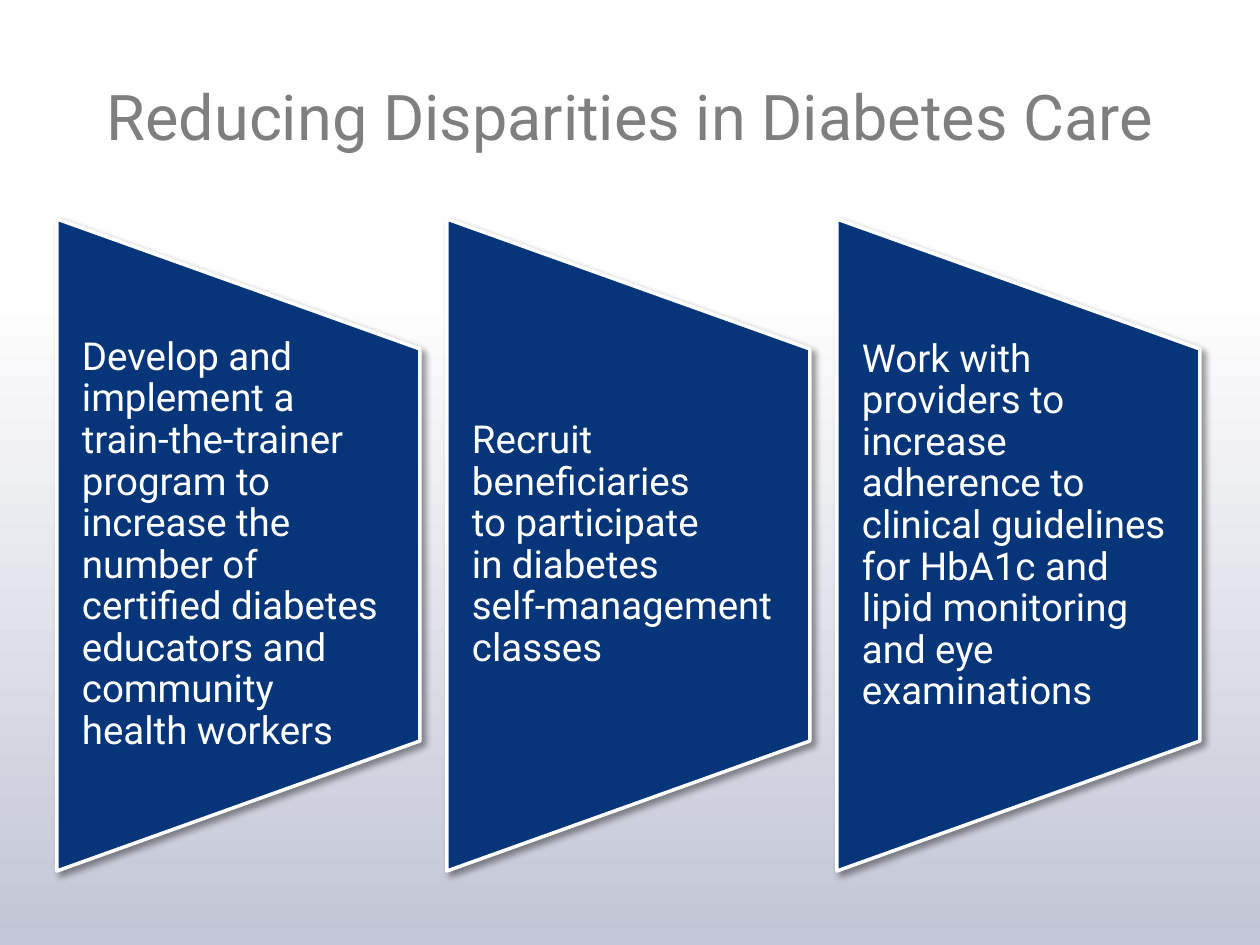
import pptx
import pptx.dml.color
import pptx.enum.text
import pptx.oxml
import pptx.oxml.ns
import pptx.util

PX = pptx.util.Inches(1) / 126
FONT = "Roboto"
TITLE = "Reducing Disparities in Diabetes Care"
BACKGROUND = [(0.31, "FFFFFF"), (1, "C2C5D5")]
PANELS = [
    {"top_inset": 126, "paras": [
        ["Develop and implement a"],
        ["train-the-trainer program to increase the number of"],
        ["certified diabetes educators and community"],
        ["health workers"],
    ]},
    {"top_inset": 126, "paras": [
        ["Recruit beneficiaries", "to participate", "in diabetes", "self-management classes"],
    ]},
    {"top_inset": 88, "paras": [
        ["Work with providers to increase adherence to clinical guidelines for HbA1c and"],
        ["lipid monitoring and eye examinations"],
    ]},
]
LEFT, TOP, WIDTH, HEIGHT = 57, 219, 363, 652
PITCH, SLOPE = 390, 130
SHADOW = (
    f'<a:effectLst {pptx.oxml.ns.nsdecls("a")}>'
    '<a:outerShdw blurRad="50800" dist="38100" dir="2700000" algn="tl" rotWithShape="0">'
    '<a:srgbClr val="000000"><a:alpha val="40000"/></a:srgbClr>'
    '</a:outerShdw></a:effectLst>'
)


def px(length):
    return pptx.util.Emu(round(length * PX))


def color(value):
    return pptx.dml.color.RGBColor.from_string(value)


def set_insets(frame, left, top, right, bottom):
    frame.word_wrap = True
    frame.margin_left, frame.margin_top = px(left), px(top)
    frame.margin_right, frame.margin_bottom = px(right), px(bottom)


def add_span(para, text, size, fill):
    span = para.add_run()
    span.text = text
    span.font.name = FONT
    span.font.size = pptx.util.Pt(size)
    span.font.color.rgb = color(fill)


def paint_background(page):
    fill = page.background.fill
    fill.gradient()
    fill.gradient_angle = 270
    for stop, (position, value) in zip(fill.gradient_stops, BACKGROUND):
        stop.position = position
        stop.color.rgb = color(value)


def add_title(page):
    box = page.shapes.add_textbox(px(63), px(66), px(1134), px(157))
    set_insets(box.text_frame, 13, 12, 13, 6)
    para = box.text_frame.paragraphs[0]
    para.alignment = pptx.enum.text.PP_ALIGN.CENTER
    add_span(para, TITLE, 36, "7F7F7F")


def add_panel(group, left, panel):
    right, bottom = left + WIDTH, TOP + HEIGHT
    outline = group.shapes.build_freeform(left, bottom, scale=PX)
    outline.add_line_segments(
        [(left, TOP), (right, TOP + SLOPE), (right, bottom - SLOPE)], close=True)
    shape = outline.convert_to_shape()
    shape.fill.solid()
    shape.fill.fore_color.rgb = color("06357A")
    shape.line.color.rgb = color("FFFFFF")
    shape.line.width = pptx.util.Pt(2)
    shape._element.spPr.append(pptx.oxml.parse_xml(SHADOW))

    frame = shape.text_frame
    set_insets(frame, 25, panel["top_inset"], 25, 126)
    frame.vertical_anchor = pptx.enum.text.MSO_ANCHOR.MIDDLE
    for index, lines in enumerate(panel["paras"]):
        para = frame.add_paragraph() if index else frame.paragraphs[0]
        para.alignment = pptx.enum.text.PP_ALIGN.LEFT
        para.line_spacing = 0.9
        for number, line in enumerate(lines):
            if number:
                para.add_line_break()
            add_span(para, line, 22, "FFFFFF")


def main():
    deck = pptx.Presentation()
    deck.slide_width, deck.slide_height = px(1260), px(945)
    page = deck.slides.add_slide(deck.slide_layouts[6])
    paint_background(page)
    add_title(page)
    group = page.shapes.add_group_shape()
    for index, panel in enumerate(PANELS):
        add_panel(group, LEFT + index * PITCH, panel)
    deck.save("out.pptx")


if __name__ == "__main__":
    main()
